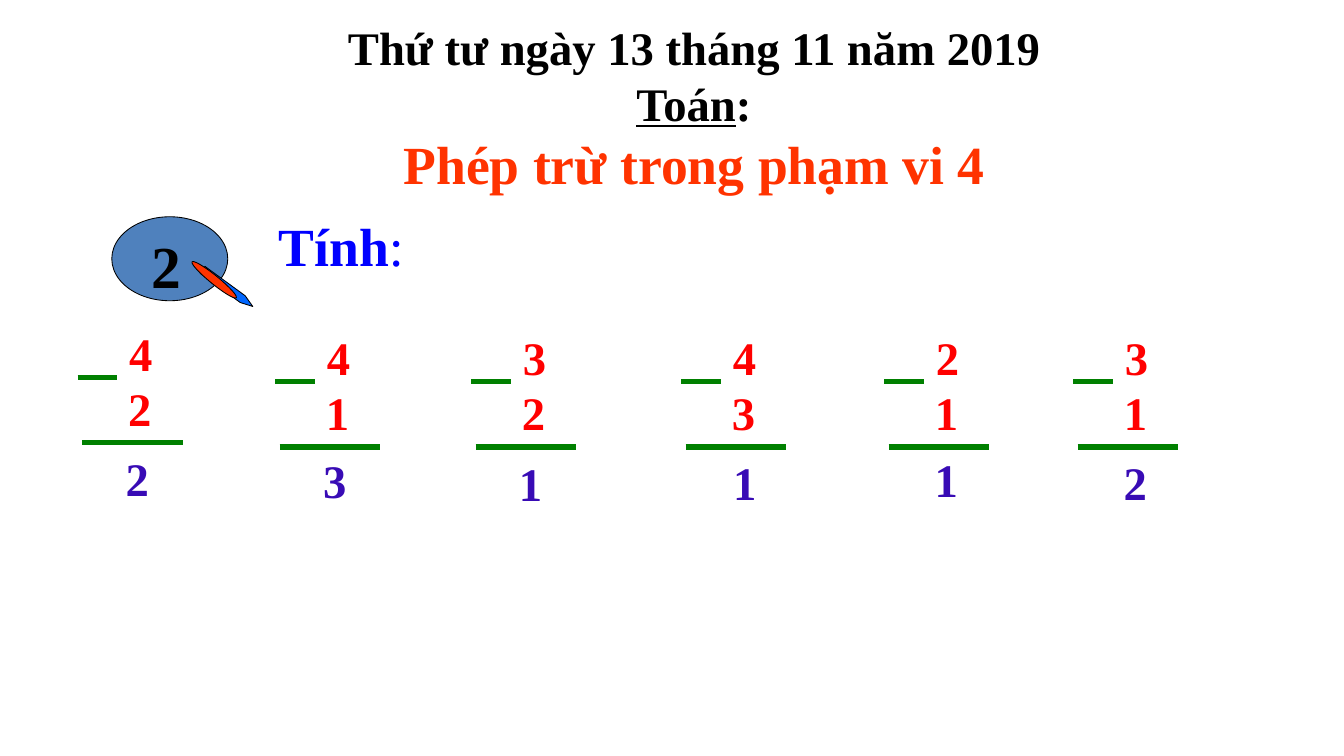
"""Build the subtraction exercise slide."""
from pptx import Presentation
from pptx.dml.color import RGBColor
from pptx.enum import shapes, text
from pptx.oxml.ns import qn
from pptx.util import Pt
from lxml import etree

COLORS = {
    "ink": "000000", "topic": "FF3300", "task": "0000FF", "badge": "4F81BD",
    "pen": "0066FF", "number": "FF0000", "answer": "380BB5", "rule": "008000",
}
FONT = "Times New Roman"

deck = Presentation()
deck.slide_width, deck.slide_height = Pt(1152), Pt(648)
slide = deck.slides.add_slide(deck.slide_layouts[5])


def write(paragraph, content, size=40, color="ink", bold=True, underline=None, align=None):
    run = paragraph.add_run()
    run.text = content
    run.font.name, run.font.size = FONT, Pt(size)
    run.font.bold, run.font.underline = bold, underline
    run.font.color.rgb = RGBColor.from_string(COLORS[color])
    if align is not None:
        paragraph.alignment = align


def prepare(box, side=10, top=5):
    frame = box.text_frame
    frame.word_wrap = True
    frame.auto_size = text.MSO_AUTO_SIZE.SHAPE_TO_FIT_TEXT
    frame.vertical_anchor = text.MSO_ANCHOR.TOP
    frame.margin_left = frame.margin_right = Pt(side)
    frame.margin_top = frame.margin_bottom = Pt(top)
    return frame.paragraphs[0]


center = text.PP_ALIGN.CENTER
heading = slide.shapes.title
heading.left, heading.top, heading.width, heading.height = Pt(62), Pt(10.8), Pt(1065.6), Pt(162.7)
date = prepare(heading)
write(date, "Thứ tư ngày 13 tháng 11 năm 2019", align=center)
subject = heading.text_frame.add_paragraph()
write(subject, "Toán", underline=True, align=center)
write(subject, ":")
topic = heading.text_frame.add_paragraph()
write(topic, "Phép trừ trong phạm vi 4", size=46, color="topic", align=center)

oval, plate = shapes.MSO_SHAPE.OVAL, shapes.MSO_SHAPE.PENTAGON
for preset, left, top, width, height, angle, color in [
    (oval, 95.8, 185.8, 99.4, 72, 0, "badge"),
    (plate, 168.5, 243.4, 53.3, 7.2, 36.1, "pen"),
    (oval, 159.1, 236.2, 49, 7.2, 39.1, "topic"),
]:
    part = slide.shapes.add_shape(preset, Pt(left), Pt(top), Pt(width), Pt(height))
    part.rotation = angle
    part.shadow.inherit = False
    part.fill.solid()
    part.fill.fore_color.rgb = RGBColor.from_string(COLORS[color])
    part.line.color.rgb = RGBColor.from_string(COLORS["ink"])
    part.line.width = Pt(0.75)
    if preset == plate:
        part.adjustments[0] = 1.48
    if color == "badge":
        exercise = slide.shapes.add_textbox(Pt(123.1), Pt(193), Pt(45.4), Pt(69))
        write(prepare(exercise, 7.2, 3.6), "2", size=51)

task = slide.shapes.add_textbox(Pt(231.8), Pt(178.6), Pt(180.7), Pt(63.4))
instruction = prepare(task, 7.2, 3.6)
write(instruction, "Tính", size=46, color="task")
write(instruction, ":", size=46, color="task", bold=False)

sums = [
    (66.5, 323.3, 4, 2, 84.2, 380.9),
    (236, 326.9, 4, 1, 253.4, 382.3),
    (404, 326.9, 3, 2, 421.2, 384.5),
    (584, 326.9, 4, 3, 604.8, 383.8),
    (758, 326.9, 2, 1, 777.6, 381.6),
    (920, 326.9, 3, 1, 939.6, 383.8),
]
for left, minus_y, upper, lower, answer_x, answer_y in sums:
    for x, y, length in [(left, minus_y, 33.6), (left + 3.6, minus_y + 56.2, 86.4)]:
        bar = slide.shapes.add_connector(
            shapes.MSO_CONNECTOR.STRAIGHT, Pt(x), Pt(y), Pt(x + length), Pt(y))
        bar.line.color.rgb = RGBColor.from_string(COLORS["rule"])
        bar.line.width = Pt(4.5)
        etree.SubElement(bar._element.spPr, qn("a:effectLst"))
    for number, x, y, width, color in [
        (upper, left + 8.4, minus_y - 49.7, 91.4, "number"),
        (lower, left + 7.7, minus_y - 2.9, 91.4, "number"),
        (upper - lower, answer_x, answer_y, 67, "answer"),
    ]:
        digit = slide.shapes.add_textbox(Pt(x), Pt(y), Pt(width), Pt(59))
        write(prepare(digit), str(number), color=color, align=center)

deck.save("out.pptx")
